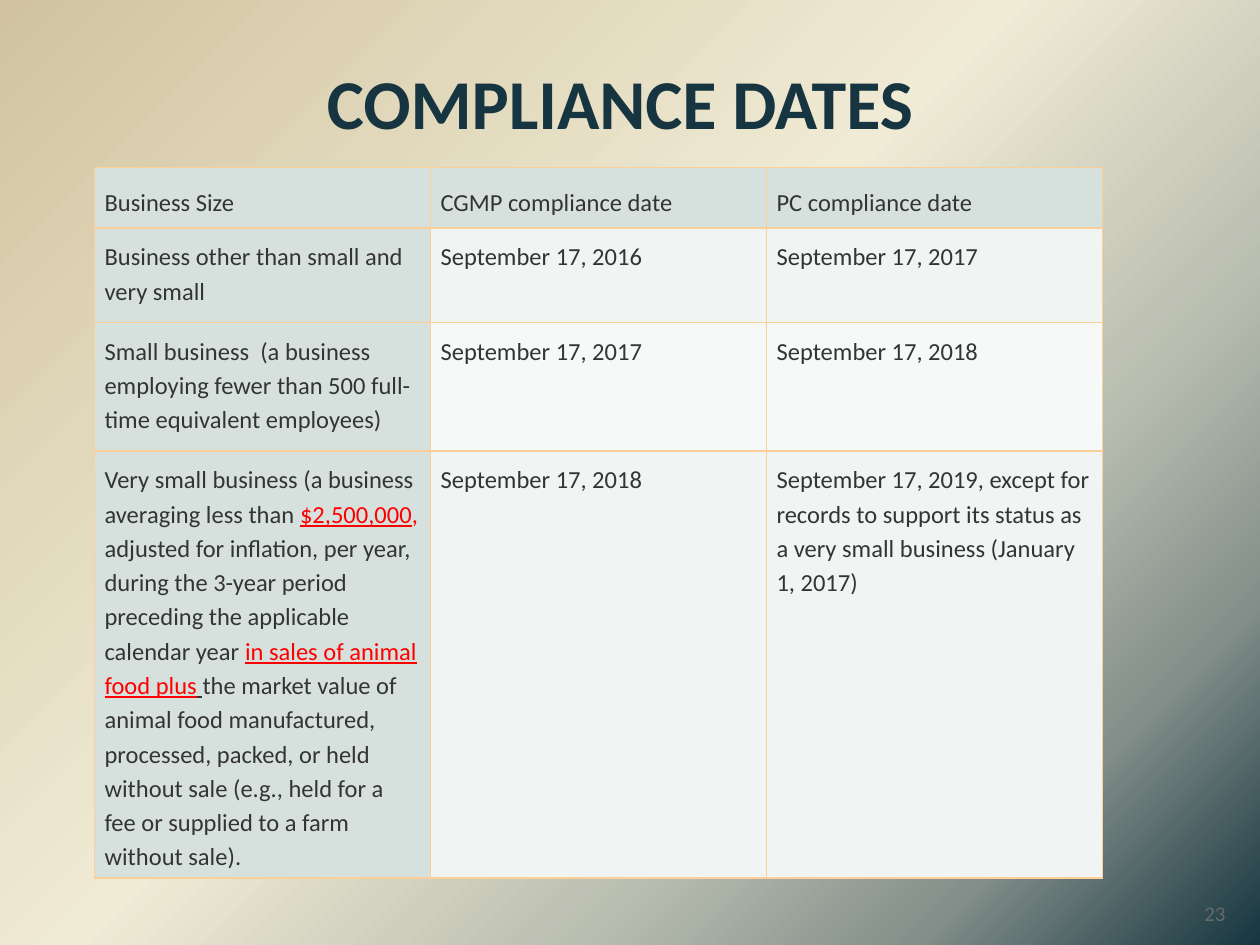
from dataclasses import dataclass

from lxml import etree
from pptx import Presentation
from pptx.dml.color import RGBColor
from pptx.enum.text import MSO_ANCHOR, PP_ALIGN
from pptx.oxml.ns import qn
from pptx.util import Inches, Pt

TOP, BOTTOM = MSO_ANCHOR.TOP, MSO_ANCHOR.BOTTOM
LEFT, CENTER = PP_ALIGN.LEFT, PP_ALIGN.CENTER


@dataclass(frozen=True)
class Theme:
    font: str = "Calibri"
    title_size: int = 40
    body_size: int = 14
    number_size: int = 12
    navy: str = "173540"
    body: str = "333434"
    number: str = "656968"
    accent: str = "FF0000"
    border: str = "FBCF97"
    label_fill: str = "D6E1DD"
    band_fills: tuple = ("F7F9F9", "F0F4F2")
    gradient: tuple = ((0, "173540"), (16, "84908B"), (31, "BABEB0"),
                       (54, "F0EBD5"), (100, "D1C39F"))


THEME = Theme()

HEADERS = ["Business Size", "CGMP compliance date", "PC compliance date"]
VERY_SMALL = [
    "Very small business (a business averaging less than ",
    ("$2,500,000", THEME.accent, True),
    (",", THEME.accent, False),
    " adjusted for inflation, per year, during the 3-year period preceding "
    "the applicable calendar year ",
    ("in sales of animal food plus", THEME.accent, True),
    (" ", THEME.body, True),
    "the market value of animal food manufactured, processed, packed, or held "
    "without sale (e.g., held for a fee or supplied to a farm without sale).",
]
ROWS = [
    HEADERS,
    ["Business other than small and very small",
     "September 17, 2016", "September 17, 2017"],
    ["Small business  (a business employing fewer than 500 full-time "
     "equivalent employees)",
     "September 17, 2017", "September 17, 2018"],
    [VERY_SMALL, "September 17, 2018",
     "September 17, 2019, except for records to support its status as "
     "a very small business (January 1, 2017)"],
]
ROW_HEIGHTS = [0.48, 0.75, 1.02, 3.39]


def write_text(tf, text, *, size, color, bold=False, align=LEFT, spacing=1.0):
    tf.word_wrap = True
    p = tf.paragraphs[0]
    p.alignment = align
    p.line_spacing = spacing
    p.space_before = Pt(0)
    for part in [text] if isinstance(text, str) else text:
        wording, tint, underline = (part, color, False) if isinstance(part, str) else part
        r = p.add_run()
        r.text = wording
        r.font.name = THEME.font
        r.font.size = Pt(size)
        r.font.bold = bold
        r.font.underline = underline
        r.font.color.rgb = RGBColor.from_string(tint)


class SlideBuilder:
    def __init__(self, prs, theme):
        self.theme = theme
        self.s = prs.slides.add_slide(prs.slide_layouts[5])

    def background(self):
        fill = self.s.background.fill
        fill.gradient()
        fill.gradient_angle = 135
        stops = self.s.element.find(".//" + qn("a:gsLst"))
        for old in list(stops):
            stops.remove(old)
        for position, color in self.theme.gradient:
            stop = etree.SubElement(stops, qn("a:gs"), pos=str(position * 1000))
            etree.SubElement(stop, qn("a:srgbClr"), val=color)

    def title(self, text, left, top, width, height):
        sp = self.s.shapes.title
        sp.left, sp.top = Inches(left), Inches(top)
        sp.width, sp.height = Inches(width), Inches(height)
        sp.text_frame.vertical_anchor = TOP
        write_text(sp.text_frame, text, size=self.theme.title_size,
                   color=self.theme.navy, bold=True, align=CENTER)

    def number(self, text, left, top, width, height):
        sp = self.s.shapes.add_textbox(Inches(left), Inches(top),
                                       Inches(width), Inches(height))
        write_text(sp.text_frame, text, size=self.theme.number_size,
                   color=self.theme.number)

    def table(self, rows, heights, left, top, width):
        frame = self.s.shapes.add_table(len(rows), len(rows[0]), Inches(left), Inches(top),
                                        Inches(width), Inches(sum(heights)))
        table = frame.table
        for row, height in zip(table.rows, heights):
            row.height = Inches(height)
        for i, row in enumerate(rows):
            for j, text in enumerate(row):
                is_label = i == 0 or j == 0
                fill = self.theme.label_fill if is_label else self.theme.band_fills[i % 2]
                self.cell(table.cell(i, j), text, fill, BOTTOM if i == 0 else TOP)

    def cell(self, cell, text, fill, anchor):
        cell.margin_left = cell.margin_right = Inches(0.08)
        cell.margin_top = cell.margin_bottom = Inches(0.08)
        cell.vertical_anchor = anchor
        write_text(cell.text_frame, text, size=self.theme.body_size,
                   color=self.theme.body, spacing=1.15)
        props = cell._tc.get_or_add_tcPr()
        for side in ("a:lnL", "a:lnR", "a:lnT", "a:lnB"):
            line = etree.SubElement(props, qn(side), w=str(Pt(1)))
            solid = etree.SubElement(line, qn("a:solidFill"))
            etree.SubElement(solid, qn("a:srgbClr"), val=self.theme.border)
        cell.fill.solid()
        cell.fill.fore_color.rgb = RGBColor.from_string(fill)


def main():
    prs = Presentation()
    prs.slide_width, prs.slide_height = Inches(10), Inches(7.5)
    slide = SlideBuilder(prs, THEME)
    slide.background()
    slide.title("COMPLIANCE DATES", 0.67, 0.42, 8.5, 1.49)
    slide.number("23", 9.46, 7.1, 0.54, 0.39)
    slide.table(ROWS, ROW_HEIGHTS, 0.75, 1.33, 8)
    prs.save("out.pptx")


if __name__ == "__main__":
    main()
